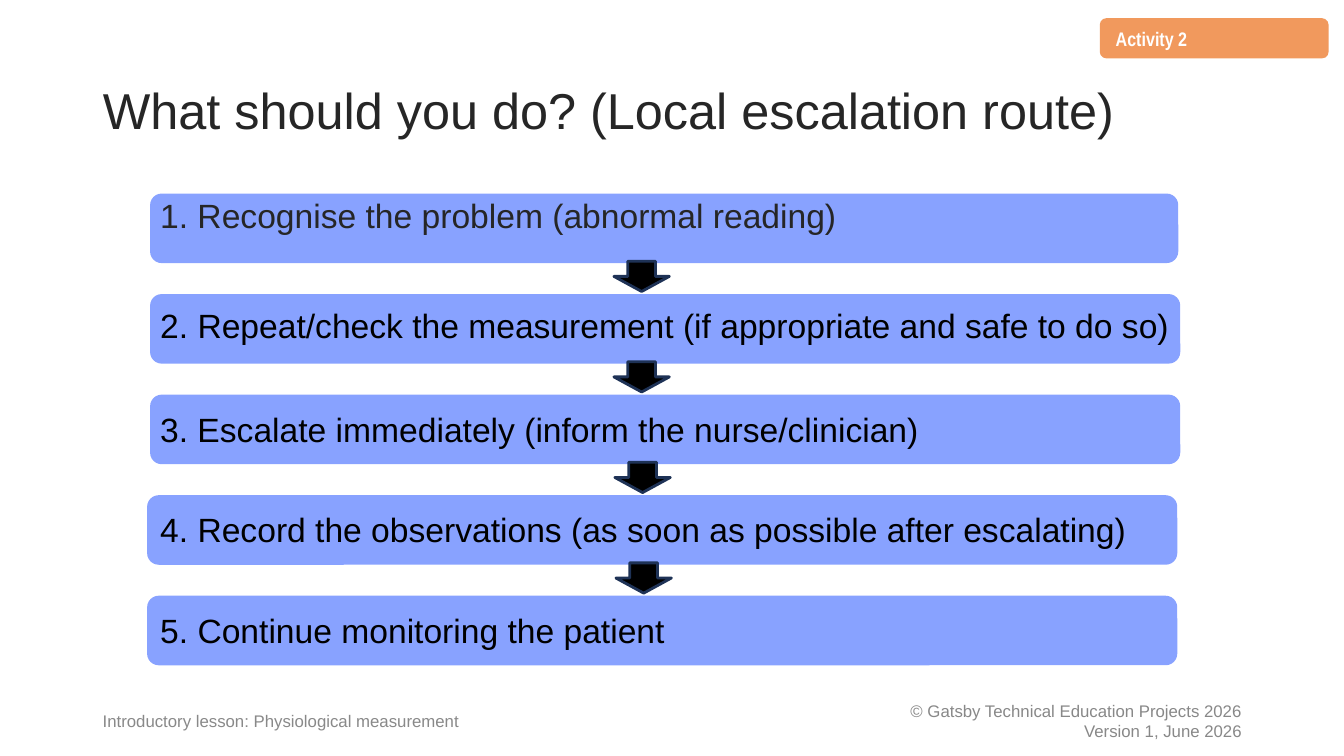
"""Build the local escalation route slide."""
from dataclasses import dataclass
from typing import Optional

from pptx import Presentation
from pptx.dml.color import RGBColor
from pptx.enum.shapes import MSO_SHAPE as Preset
from pptx.enum.text import MSO_ANCHOR as Anchor, MSO_AUTO_SIZE as AutoSize, PP_ALIGN as Align
from pptx.shapes.autoshape import Shape
from pptx.slide import Slide
from pptx.util import Emu, Inches, Pt

SLIDE_WIDTH, SLIDE_HEIGHT = Inches(13.33), Inches(7.5)
BAR_BLUE = RGBColor(0x88, 0xA2, 0xFF)
ARROW_EDGE = RGBColor(0x1E, 0x32, 0x56)
BADGE_ORANGE = RGBColor(0xF1, 0x99, 0x5D)
BLACK = RGBColor(0x00, 0x00, 0x00)
WHITE = RGBColor(0xFF, 0xFF, 0xFF)
CHARCOAL = RGBColor(0x26, 0x26, 0x26)
LESSON_GREY = RGBColor(0x89, 0x89, 0x89)
COPYRIGHT_GREY = RGBColor(0x88, 0x88, 0x88)

BAR_TOP, BAR_PITCH, BAR_HEIGHT = 25.6, 13.3, 9.2
ARROW_OFFSET, ARROW_WIDTH, ARROW_HEIGHT = 8.96, 4.13, 4
LABEL_LEFT = 10.28


@dataclass(frozen=True)
class Area:
    """Place on the slide, in percent of its width and height."""
    left: float
    top: float
    width: float
    height: float

    def lengths(self) -> tuple[Emu, Emu, Emu, Emu]:
        """Return left, top, width and height as lengths."""
        return (Emu(round(SLIDE_WIDTH * self.left / 100)),
                Emu(round(SLIDE_HEIGHT * self.top / 100)),
                Emu(round(SLIDE_WIDTH * self.width / 100)),
                Emu(round(SLIDE_HEIGHT * self.height / 100)))


@dataclass(frozen=True)
class TextStyle:
    """Look of a piece of text."""
    size: float
    color: RGBColor
    font: str = "Arial"
    bold: bool = False
    align: Align = Align.LEFT
    anchor: Anchor = Anchor.TOP
    spacing: float = 1.0
    margin: float = 0
    indent: float = 0
    fit: AutoSize = AutoSize.NONE


@dataclass(frozen=True)
class Step:
    """One stage of the route, with the arrow that leaves it."""
    wording: str
    bar_left: float
    bar_width: float
    label_top: float
    label_width: float
    label_height: float
    style: TextStyle
    arrow_left: Optional[float] = None


FIRST_STEP = TextStyle(24, CHARCOAL, spacing=1.08, margin=0.12)
NEXT_STEP = TextStyle(24, BLACK, margin=0.12, fit=AutoSize.SHAPE_TO_FIT_TEXT)
TITLE = TextStyle(36, CHARCOAL, anchor=Anchor.MIDDLE, spacing=0.9)
BADGE = TextStyle(14, WHITE, "Arial Narrow", bold=True, spacing=1.08, margin=0.29, indent=-0.25)
LESSON = TextStyle(12, LESSON_GREY, anchor=Anchor.MIDDLE)
COPYRIGHT = TextStyle(12, COPYRIGHT_GREY, align=Align.RIGHT, anchor=Anchor.MIDDLE)

STEPS = (
    Step("1. Recognise the problem (abnormal reading)",
         11.17, 76.5, 24.67, 88.58, 8.8, FIRST_STEP, 45.68),
    Step("2. Repeat/check the measurement (if appropriate and safe to do so)",
         11.17, 76.65, 39.73, 81.68, 6.67, NEXT_STEP, 45.68),
    Step("3. Escalate immediately (inform the nurse/clinician)",
         11.17, 76.65, 53.47, 78.08, 6.67, NEXT_STEP, 45.75),
    Step("4. Record the observations (as soon as possible after escalating)",
         10.95, 76.65, 66.67, 84.75, 6.67, NEXT_STEP, 45.83),
    Step("5. Continue monitoring the patient",
         10.95, 76.65, 80, 50.03, 6.67, NEXT_STEP),
)


def write(holder: Shape, lines: tuple[str, ...], style: TextStyle) -> None:
    """Fill a shape with one styled paragraph per line."""
    frame = holder.text_frame
    frame.word_wrap = True
    frame.auto_size = style.fit
    frame.vertical_anchor = style.anchor
    for number, line in enumerate(lines):
        paragraph = frame.add_paragraph() if number else frame.paragraphs[0]
        properties = paragraph._p.get_or_add_pPr()
        properties.set("marL", str(Inches(style.margin)))
        properties.set("indent", str(Inches(style.indent)))
        paragraph.alignment = style.align
        paragraph.line_spacing = style.spacing
        run = paragraph.add_run()
        run.text = line
        run.font.name = style.font
        run.font.size = Pt(style.size)
        run.font.bold = style.bold
        run.font.color.rgb = style.color


def add_label(slide: Slide, area: Area, style: TextStyle, *lines: str) -> None:
    """Add a text box."""
    write(slide.shapes.add_textbox(*area.lengths()), lines, style)


def add_block(slide: Slide, preset: Preset, area: Area, fill: RGBColor,
              edge: Optional[RGBColor] = None) -> Shape:
    """Add a flat filled shape, outlined when an edge colour is given."""
    block = slide.shapes.add_shape(preset, *area.lengths())
    block.shadow.inherit = False
    block.fill.solid()
    block.fill.fore_color.rgb = fill
    if edge is None:
        block.line.fill.background()
    else:
        block.line.color.rgb = edge
        block.line.width = Pt(2)
    return block


def add_route(slide: Slide) -> None:
    """Draw the bars, their wording and the arrows between them."""
    tops = [BAR_TOP + BAR_PITCH * row for row in range(len(STEPS))]
    for step, top in zip(STEPS, tops):
        add_block(slide, Preset.ROUNDED_RECTANGLE,
                  Area(step.bar_left, top, step.bar_width, BAR_HEIGHT), BAR_BLUE)
    for step in STEPS:
        add_label(slide, Area(LABEL_LEFT, step.label_top, step.label_width, step.label_height),
                  step.style, step.wording)
    for step, top in zip(STEPS, tops):
        if step.arrow_left is not None:
            add_block(slide, Preset.DOWN_ARROW,
                      Area(step.arrow_left, top + ARROW_OFFSET, ARROW_WIDTH, ARROW_HEIGHT),
                      BLACK, ARROW_EDGE)


def main() -> None:
    """Build and save the slide."""
    deck = Presentation()
    deck.slide_width, deck.slide_height = SLIDE_WIDTH, SLIDE_HEIGHT
    slide = deck.slides.add_slide(deck.slide_layouts[5])

    title = slide.shapes.title
    title.left, title.top, title.width, title.height = Area(6.9, 5.33, 86.25, 19.33).lengths()
    write(title, ("What should you do? (Local escalation route)",), TITLE)

    add_label(slide, Area(6.9, 92.67, 34.5, 5.33), LESSON,
              "Introductory lesson: Physiological measurement")
    add_label(slide, Area(59.4, 92.67, 33.75, 5.33), COPYRIGHT,
              "© Gatsby Technical Education Projects 2026", "Version 1, June 2026")
    add_route(slide)
    badge = add_block(slide, Preset.FLOWCHART_ALTERNATE_PROCESS,
                      Area(81.83, 2.4, 17.03, 5.33), BADGE_ORANGE)
    write(badge, ("Activity 2",), BADGE)
    deck.save("out.pptx")


if __name__ == "__main__":
    main()
